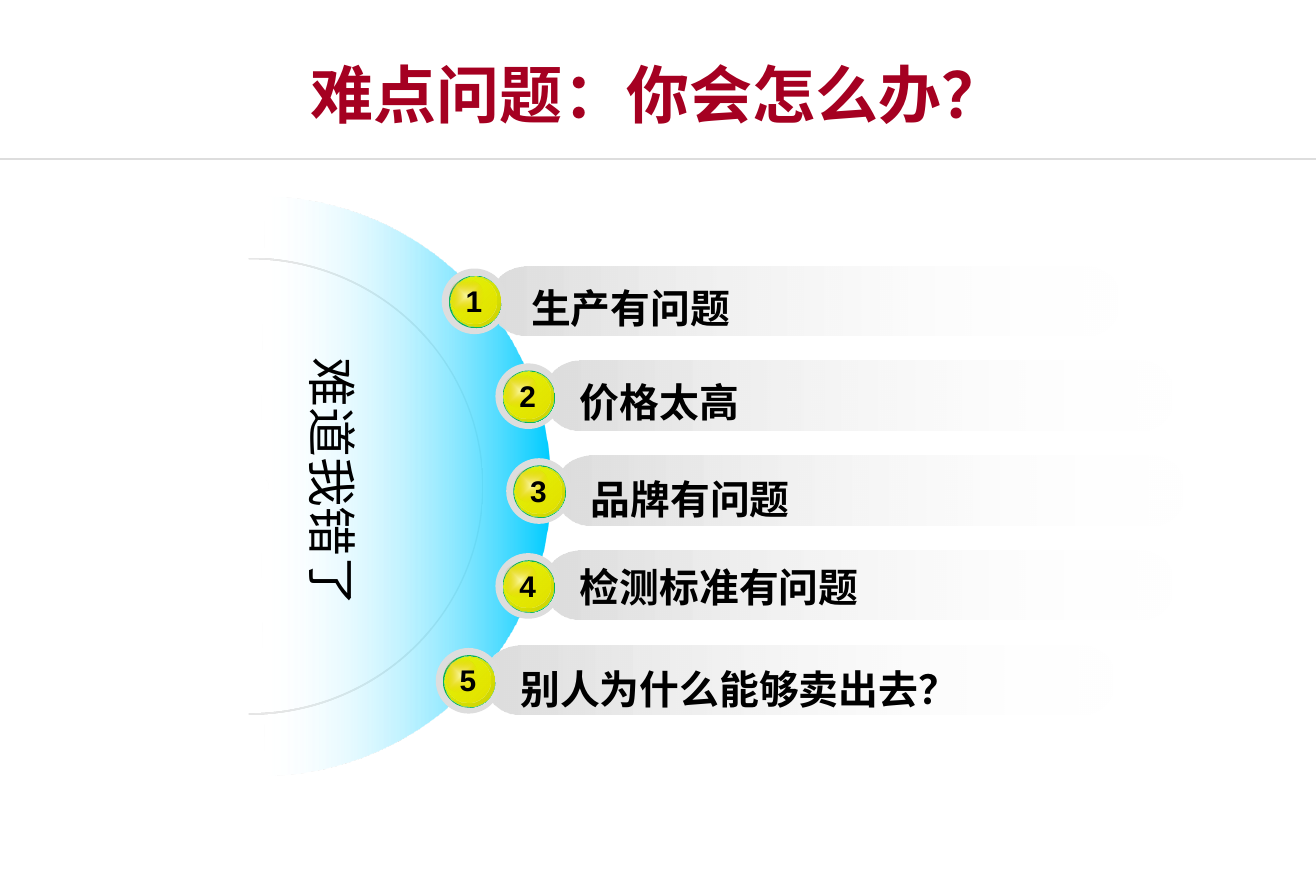
"""Build a slide with a fading half ring and five numbered answers."""
from pptx import Presentation, util as u
from pptx.dml import color
from pptx.enum import shapes, text
from pptx.oxml import parse_xml
from pptx.oxml.ns import nsdecls, qn

CJK_FONT = "Noto Sans CJK SC"
KIND = shapes.MSO_SHAPE
CENTER = text.PP_ALIGN.CENTER
FIRST_TOP, ROW_STEP = 2.23, 0.795
ROWS = [
    ("生产有问题", 4.11, 4.35, 0.10),
    ("价格太高", 4.56, 4.76, 0.09),
    ("品牌有问题", 4.65, 4.85, 0.11),
    ("检测标准有问题", 4.56, 4.76, 0.05),
    ("别人为什么能够卖出去？", 4.06, 4.26, 0.11),
]
LINEAR = '<a:lin ang="{}" scaled="0"/>'
CORNER = '<a:path path="rect"><a:fillToRect l="100000" t="100000"/></a:path>'
MIDDLE = ('<a:path path="shape"><a:fillToRect l="50000" t="50000" '
          'r="50000" b="50000"/></a:path>')
ACROSS, DIAGONAL, DOWN = (LINEAR.format(angle * 60000) for angle in (0, 45, 90))
BADGE_LAYERS = [
    (0, 0, 0.55, "DDDDDD", None),
    (0.06, 0.06, 0.44, [(0, "10E470", 100), (100, "0DB358", 100)], CORNER),
    (0.07, 0.07, 0.42, [(0, "FFFF00", 85), (100, "D1D100", 100)], DIAGONAL),
    (0.07, 0.09, 0.28, [(0, "FFFFFF", 100), (100, "E9940B", 0)], MIDDLE),
    (0.08, 0.08, 0.38, [(0, "FFFF00", 0), (100, "E2E200", 100)], DIAGONAL),
]


def rgb(value):
    """Turn a hex string into a colour."""
    return color.RGBColor.from_string(value)


def apply(target, values):
    """Set each named attribute on the target."""
    for name, value in values.items():
        setattr(target, name, value)


def fill_gradient(shape, stops, direction):
    """Fill a shape with (position, colour, opacity) stops."""
    stop_xml = "".join(
        f'<a:gs pos="{position * 1000}"><a:srgbClr val="{value}">'
        f'<a:alpha val="{opacity * 1000}"/></a:srgbClr></a:gs>'
        for position, value, opacity in stops)
    shape.fill.background()
    properties = shape._element.spPr
    properties.replace(properties.find(qn("a:noFill")), parse_xml(
        f'<a:gradFill {nsdecls("a")} rotWithShape="1">'
        f'<a:gsLst>{stop_xml}</a:gsLst>{direction}</a:gradFill>'))


def add_shape(parent, kind, box, paint, direction=None, adjustments=(), rotation=0):
    """Add a borderless shape with a solid or gradient fill."""
    shape = parent.add_shape(kind, *map(u.Inches, box))
    shape.shadow.inherit = False
    shape.line.fill.background()
    shape.rotation = rotation
    for index, value in enumerate(adjustments):
        shape.adjustments[index] = value
    if direction:
        fill_gradient(shape, paint, direction)
    else:
        shape.fill.solid()
        shape.fill.fore_color.rgb = rgb(paint)


def add_text(slide, words, box, size, font="Arial", hue="000000", bold=True,
             frame_values=None, paragraph_values=None):
    """Add a one-paragraph text box and return its frame."""
    frame = slide.shapes.add_textbox(*map(u.Inches, box)).text_frame
    apply(frame, {"word_wrap": True, "auto_size": text.MSO_AUTO_SIZE.SHAPE_TO_FIT_TEXT,
                  **(frame_values or {})})
    paragraph = frame.paragraphs[0]
    apply(paragraph, paragraph_values or {})
    run = paragraph.add_run()
    run.text = words
    apply(run.font, {"name": font, "size": u.Pt(size), "bold": bold})
    run.font.color.rgb = rgb(hue)
    run.font._element.find(qn("a:latin")).addnext(
        parse_xml(f'<a:ea {nsdecls("a")} typeface="{CJK_FONT}"/>'))
    return frame


def add_divider(slide):
    """Draw the thin line under the title."""
    line = slide.shapes.add_connector(
        shapes.MSO_CONNECTOR.STRAIGHT, *map(u.Inches, (0, 1.33, 11.02, 1.33)))
    line.line.color.rgb = rgb("DDDDDD")
    line.line.width = u.Pt(1)
    line._element.spPr.append(parse_xml(f'<a:effectLst {nsdecls("a")}/>'))


def add_half_ring(slide):
    """Draw the thin arc, the fading band and the sideways caption."""
    add_shape(slide.shapes, KIND.BLOCK_ARC, (0.17, 2.11, 3.83, 3.93),
              [(0, "DDDDDD", 100), (100, "F0F0F0", 100)], DOWN, (108, 0, 0.003), 90)
    add_shape(slide.shapes, KIND.BLOCK_ARC, (-0.24, 1.65, 4.85, 4.85),
              [(0, "00CCFF", 100), (50, "FFFFFF", 0), (100, "00CCFF", 100)],
              DOWN, (108.6, 215.4, 0.485), 90)
    margins = dict.fromkeys(
        ("margin_left", "margin_top", "margin_right", "margin_bottom"), 0)
    caption = add_text(slide, "难道我错了", (2.55, 3, 0.62, 2.08), 30, CJK_FONT, bold=False,
                       frame_values={"word_wrap": False, **margins},
                       paragraph_values={"alignment": CENTER, "line_spacing": 1.25})
    caption._txBody.bodyPr.set("vert", "vert")


def add_row(slide, number, label, bar_left, label_left, label_drop):
    """Draw one bar with its numbered badge and label."""
    top = FIRST_TOP + (number - 1) * ROW_STEP
    badge_left, badge_top = bar_left - 0.41, top + 0.02
    add_shape(slide.shapes, KIND.ROUNDED_RECTANGLE, (bar_left, top, 5.28, 0.58),
              [(0, "DDDDDD", 100), (100, "FFFFFF", 0)], ACROSS, (0.5,))
    badge = slide.shapes.add_group_shape()
    for left, drop, size, paint, direction in BADGE_LAYERS:
        add_shape(badge.shapes, KIND.OVAL,
                  (badge_left + left, badge_top + drop, size, size), paint, direction)
    add_text(slide, str(number), (badge_left + 0.1, badge_top + 0.07, 0.34, 0.4), 18,
             frame_values={"word_wrap": False}, paragraph_values={"alignment": CENTER})
    add_text(slide, label, (label_left, top + label_drop, 4.08, 0.5), 24)


def main():
    """Build and save the slide."""
    presentation = Presentation()
    presentation.slide_width = u.Cm(28)
    presentation.slide_height = u.Inches(7.5)
    slide = presentation.slides.add_slide(presentation.slide_layouts[6])
    add_divider(slide)
    add_text(slide, "难点问题：你会怎么办？", (0, 0.42, 11.02, 0.73), 38, CJK_FONT, "A50021",
             frame_values={"vertical_anchor": text.MSO_ANCHOR.BOTTOM},
             paragraph_values={"alignment": CENTER})
    add_half_ring(slide)
    for number, row in enumerate(ROWS, 1):
        add_row(slide, number, *row)
    presentation.save("out.pptx")


if __name__ == "__main__":
    main()
